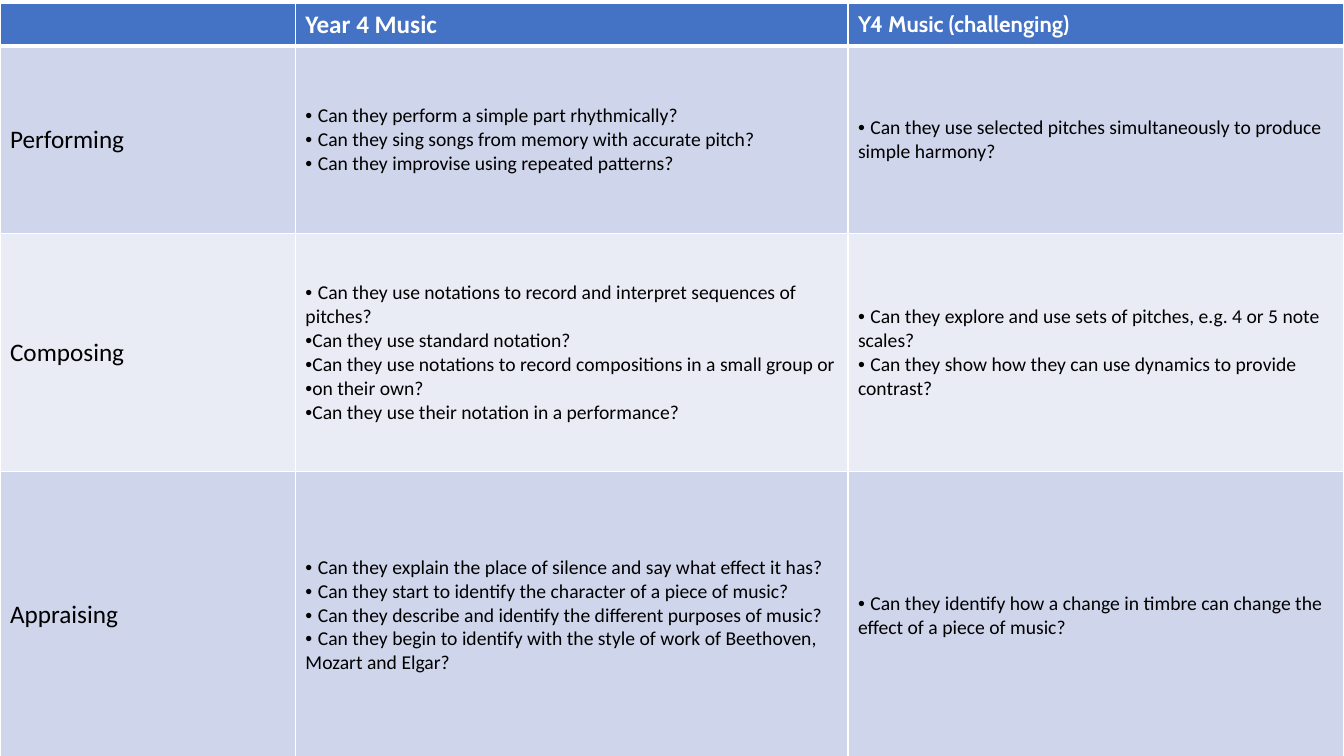
from lxml.etree import SubElement
from pptx import Presentation
from pptx.dml.color import RGBColor
from pptx.enum.text import MSO_ANCHOR
from pptx.oxml.ns import qn
from pptx.util import Inches, Pt

COLUMN_WIDTHS = [2.93, 5.48, 4.92]
ROW_HEIGHTS = [0.43, 1.86, 2.36, 2.85]
ROW_FILLS = ["4472C4", "CFD5EA", "E9EBF5", "CFD5EA"]
ROWS = [
    [[], ["Year 4 Music"], ["Y4 Music (challenging)"]],
    [
        ["Performing"],
        [
            "• Can they perform a simple part rhythmically?\n"
            "• Can they sing songs from memory with accurate pitch?",
            "• Can they improvise using repeated patterns?",
        ],
        ["• Can they use selected pitches simultaneously to produce simple harmony?"],
    ],
    [
        ["Composing"],
        [
            "• Can they use notations to record and interpret sequences of pitches?",
            "•Can they use standard notation?",
            "•Can they use notations to record compositions in a small group or",
            "•on their own?",
            "•Can they use their notation in a performance?",
        ],
        [
            "• Can they explore and use sets of pitches, e.g. 4 or 5 note scales?",
            "• Can they show how they can use dynamics to provide contrast?",
        ],
    ],
    [
        ["Appraising"],
        [
            "• Can they explain the place of silence and say what effect it has?",
            "• Can they start to identify the character of a piece of music?\n"
            "• Can they describe and identify the different purposes of music?",
            "• Can they begin to identify with the style of work of Beethoven,",
            "Mozart and Elgar?",
        ],
        ["• Can they identify how a change in timbre can change the effect of a piece of music?"],
    ],
]


def add_span(para, text, *, size, font="Calibri", color="000000", bold=False):
    span = para.add_run()
    span.text = text
    span.font.size = Pt(size)
    span.font.name = font
    span.font.bold = bold
    span.font.color.rgb = RGBColor.from_string(color)


def set_borders(cell, bottom_width):
    properties = cell._tc.get_or_add_tcPr()
    for side, width in {"L": 1, "R": 1, "T": 1, "B": bottom_width}.items():
        line = SubElement(properties, qn(f"a:ln{side}"), w=str(Pt(width)))
        fill = SubElement(line, qn("a:solidFill"))
        SubElement(fill, qn("a:srgbClr"), val="FFFFFF")


deck = Presentation()
deck.slide_width = Inches(13.33)
deck.slide_height = Inches(7.5)
page = deck.slides.add_slide(deck.slide_layouts[6])

table = page.shapes.add_table(
    len(ROWS), len(COLUMN_WIDTHS), Inches(0), Inches(0.03), Inches(13.33), Inches(7.5)
).table
for column, width in zip(table.columns, COLUMN_WIDTHS):
    column.width = Inches(width)
for row, height in zip(table.rows, ROW_HEIGHTS):
    row.height = Inches(height)

for row_index, row_texts in enumerate(ROWS):
    is_header = row_index == 0
    for column_index, paragraphs in enumerate(row_texts):
        cell = table.cell(row_index, column_index)
        set_borders(cell, bottom_width=3 if is_header else 1)
        cell.fill.solid()
        cell.fill.fore_color.rgb = RGBColor.from_string(ROW_FILLS[row_index])
        cell.vertical_anchor = MSO_ANCHOR.MIDDLE

        style = {"size": 18 if column_index == 0 else 14}
        if is_header:
            style = {"size": 18, "color": "FFFFFF", "bold": True}
            if column_index == 2:
                style.update(size=16, font="Cabin")

        for para_index, text in enumerate(paragraphs):
            frame = cell.text_frame
            para = frame.paragraphs[0] if para_index == 0 else frame.add_paragraph()
            for line_index, line in enumerate(text.split("\n")):
                if line_index:
                    para.add_line_break()
                if line.startswith("• "):
                    add_span(para, "• ", **{**style, "font": "Arial"})
                elif line.startswith("•"):
                    bullet = para._p.get_or_add_pPr()
                    bullet.set("marL", "0")
                    bullet.set("indent", "0")
                    SubElement(bullet, qn("a:buFont"), typeface="Arial")
                    SubElement(bullet, qn("a:buChar"), char="•")
                add_span(para, line.lstrip("• "), **style)

deck.save("out.pptx")
